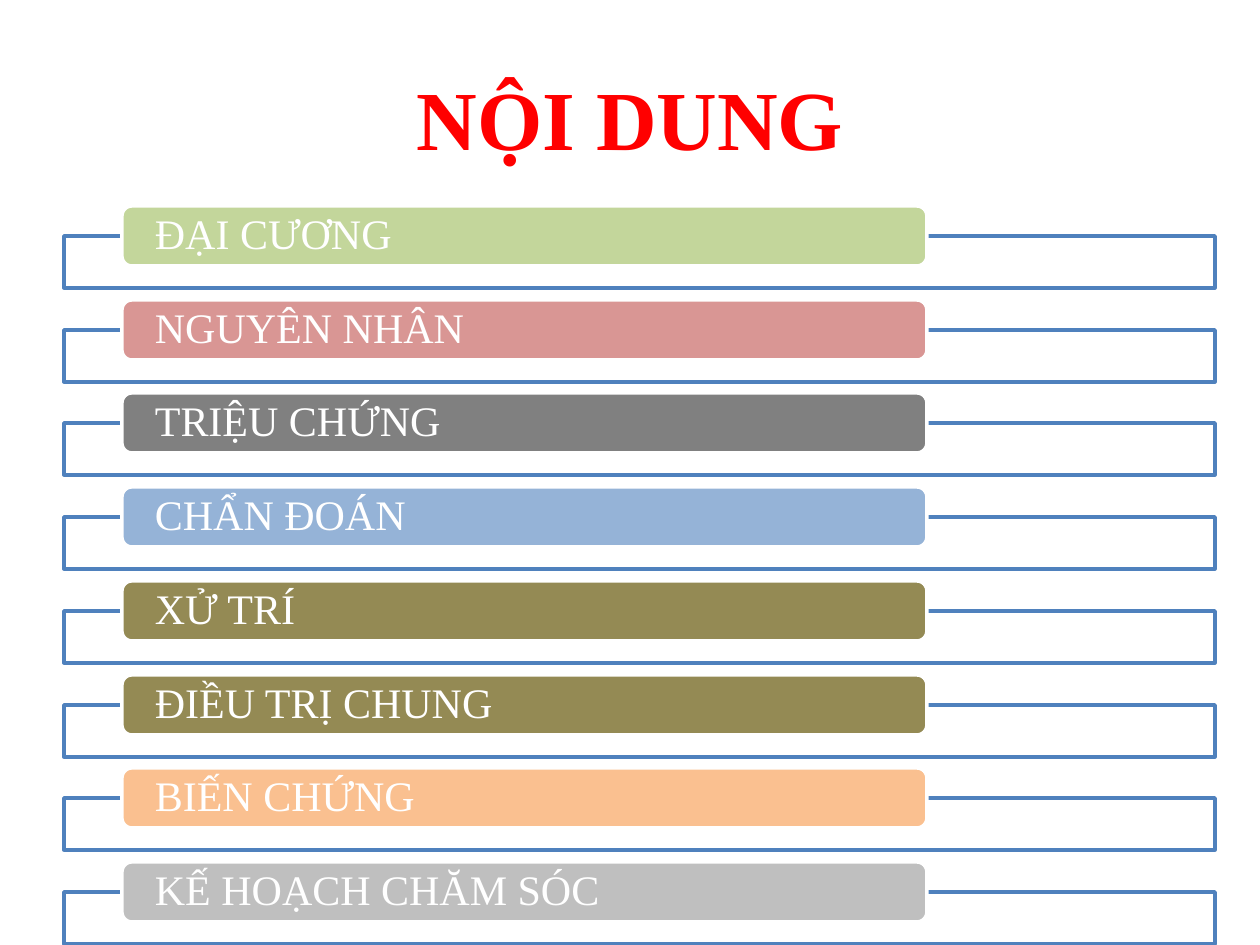
from pptx import Presentation
from pptx import util as u
from pptx.dml.color import RGBColor
from pptx.enum import shapes, text

PX_PER_INCH = 126
FONT = "Times New Roman"
COLOURS = {
    "title": "FF0000", "white": "FFFFFF", "frame": "4F81BD",
    "green": "C3D69B", "rose": "D99694", "grey": "808080", "blue": "95B3D7",
    "olive": "948A54", "orange": "FAC090", "silver": "BFBFBF",
}
SECTIONS = [
    ("ĐẠI CƯƠNG", "green"), ("NGUYÊN NHÂN", "rose"),
    ("TRIỆU CHỨNG", "grey"), ("CHẨN ĐOÁN", "blue"),
    ("XỬ TRÍ", "olive"), ("ĐIỀU TRỊ CHUNG", "olive"),
    ("BIẾN CHỨNG", "orange"), ("KẾ HOẠCH CHĂM SÓC", "silver"),
]
FIRST_TOP, LAST_TOP = 206, 862  # tops of the first and last section bars


def px(length):
    return u.Emu(round(length * u.Inches(1) / PX_PER_INCH))


def colour(name):
    return RGBColor.from_string(COLOURS[name])


def add_span(para, words, size, name, bold=False):
    span = para.add_run()
    span.text = words
    span.font.name = FONT
    span.font.size = u.Pt(size)
    span.font.bold = bold
    span.font.color.rgb = colour(name)


def add_box(page, kind, left, top, width, height, fill, line):
    box = page.shapes.add_shape(kind, px(left), px(top), px(width), px(height))
    box.shadow.inherit = False
    box.fill.solid()
    box.fill.fore_color.rgb = colour(fill)
    box.line.color.rgb = colour(line)
    box.line.width = u.Pt(2)
    return box


def add_title(page, words):
    title = page.shapes.title
    title.left, title.top, title.width, title.height = map(px, (63, 38, 1134, 157))
    title.text_frame.vertical_anchor = text.MSO_ANCHOR.MIDDLE
    para = title.text_frame.paragraphs[0]
    para.alignment = text.PP_ALIGN.CENTER
    add_span(para, words, 48, "title", bold=True)


def add_section(page, top, words, fill):
    # Outlined frame behind, coloured bar with the heading in front
    kinds = shapes.MSO_SHAPE
    add_box(page, kinds.RECTANGLE, 64, top + 30, 1151, 52, "white", "frame")
    bar = add_box(page, kinds.ROUNDED_RECTANGLE, 122, top, 805, 60, fill, "white")
    frame = bar.text_frame
    frame.word_wrap = True
    frame.vertical_anchor = text.MSO_ANCHOR.MIDDLE
    frame.margin_left = frame.margin_right = px(30)
    frame.margin_top = frame.margin_bottom = 0
    para = frame.paragraphs[0]
    para.alignment = text.PP_ALIGN.LEFT
    para.line_spacing = 0.9
    add_span(para, words, 24, "white")


def main():
    deck = Presentation()
    deck.slide_width, deck.slide_height = px(1260), px(945)
    page = deck.slides.add_slide(deck.slide_layouts.get_by_name("Title Only"))

    add_title(page, "NỘI DUNG")

    # Sections at equal steps down the page
    step = (LAST_TOP - FIRST_TOP) / (len(SECTIONS) - 1)
    for index, (words, fill) in enumerate(SECTIONS):
        add_section(page, round(FIRST_TOP + index * step), words, fill)

    deck.save("out.pptx")


if __name__ == "__main__":
    main()
